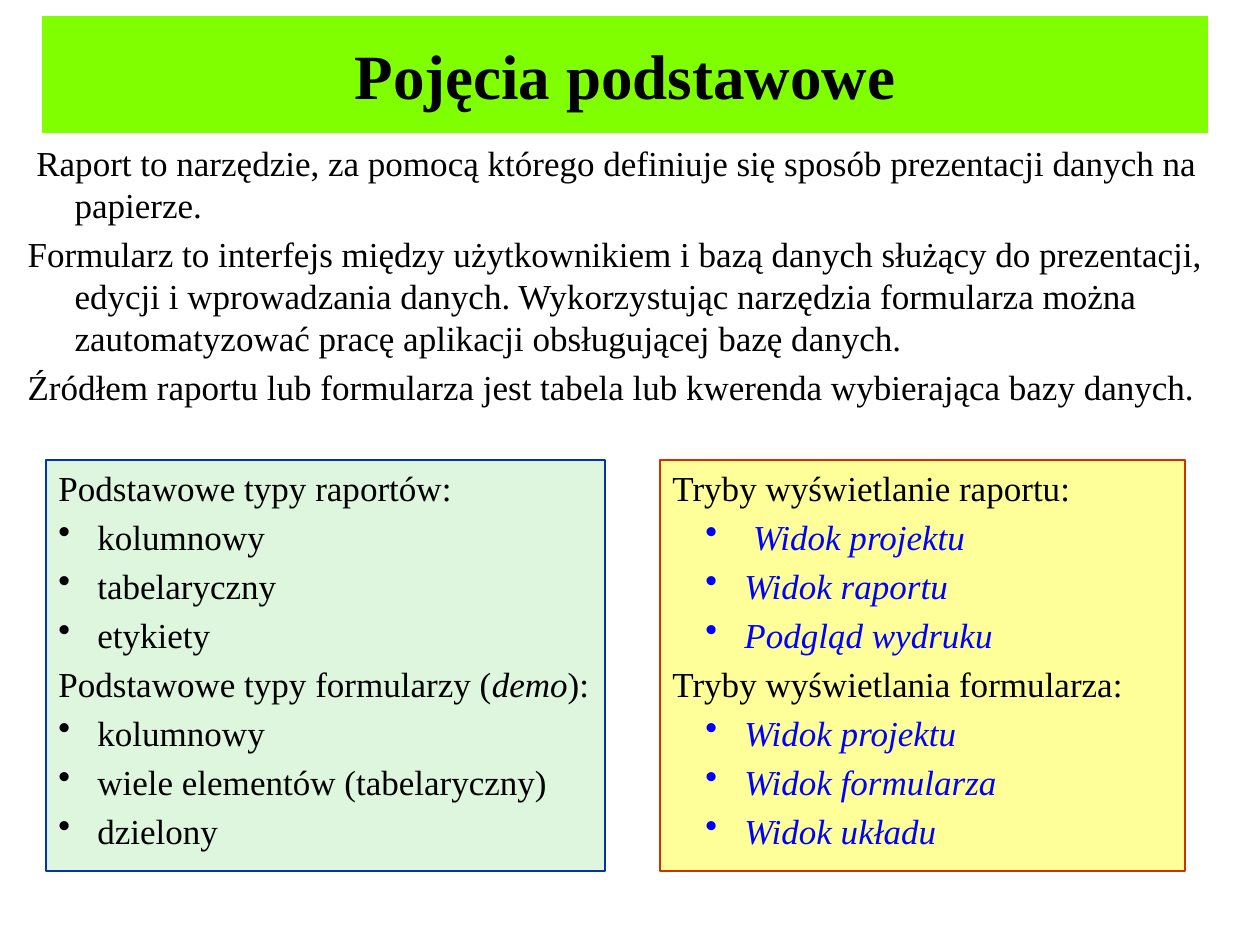
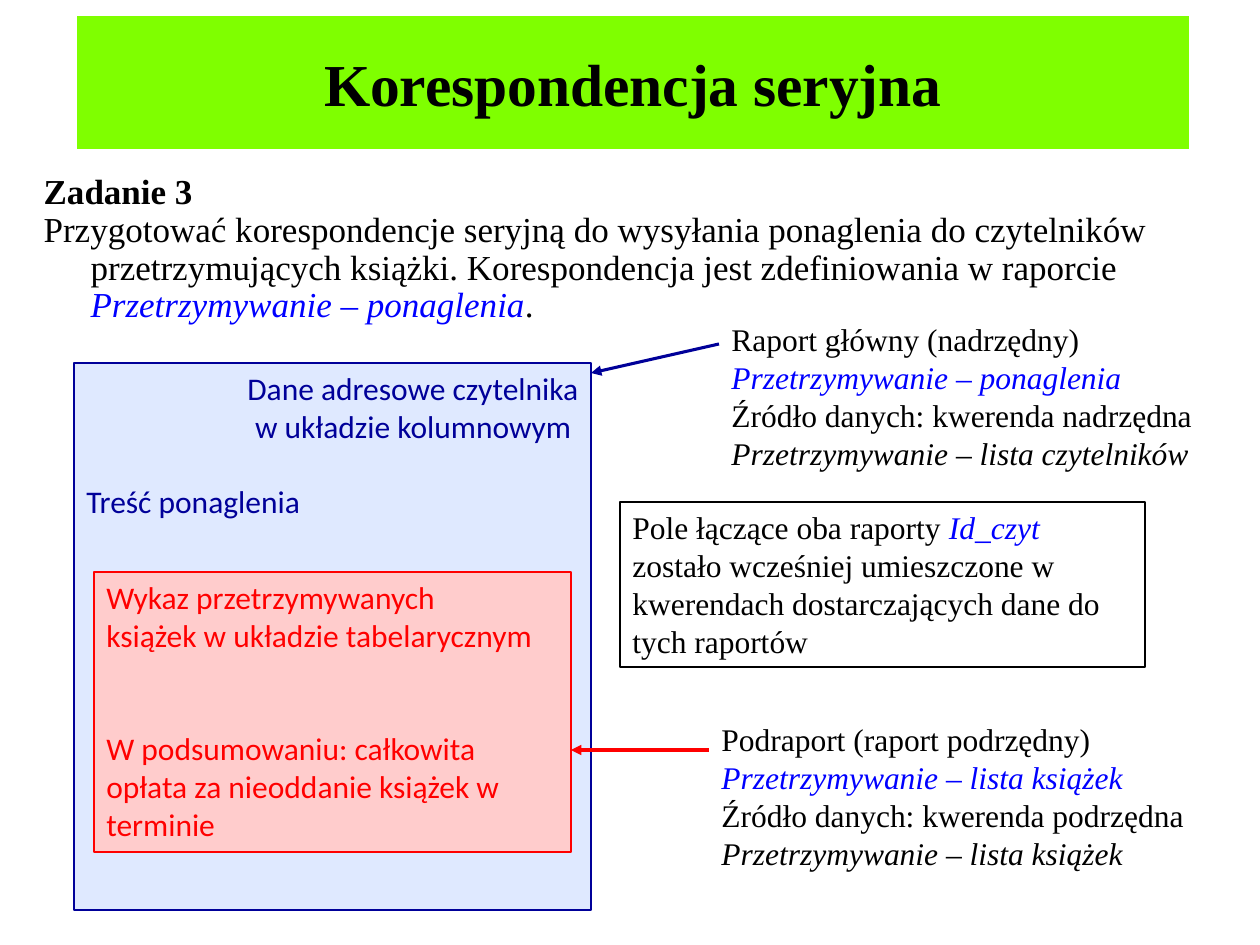
from dataclasses import dataclass

from lxml.etree import SubElement
from pptx import Presentation
from pptx.dml.color import RGBColor
from pptx.enum.shapes import MSO_CONNECTOR, MSO_SHAPE
from pptx.enum.text import MSO_ANCHOR, MSO_AUTO_SIZE, PP_ALIGN
from pptx.oxml.ns import qn
from pptx.util import Emu, Pt

PX_PER_INCH = 126
PAGE_WIDTH, PAGE_HEIGHT = 1260, 945


@dataclass(frozen=True)
class Theme:
    serif: str = "Times New Roman"
    sans: str = "Calibri"
    black: str = "000000"
    white: str = "FFFFFF"
    band: str = "7FFF00"
    accent: str = "0000FF"
    navy: str = "000099"
    red: str = "FF0000"
    ice: str = "DFE9FF"
    pink: str = "FFCCCC"
    mint: str = "DEF5DE"
    mint_edge: str = "0234AD"
    yellow: str = "FFFF99"
    yellow_edge: str = "CC3300"
    title_size: int = 36
    small_title_size: int = 34
    body_size: int = 20
    note_size: int = 18
    list_gap: int = 4
    sans_line: float = 21.5


THEME = Theme()
EMPHASIS = dict(italic=True)
OBJECT_NAME = dict(italic=True, color=THEME.accent)
HANGING = 47
BULLET_GAP = 39


def px(length):
    return Emu(round(length * 914400 / PX_PER_INCH))


def rgb(color):
    return RGBColor.from_string(color)


# Text

def add_span(para, text, size=THEME.body_size, font=THEME.serif,
             color=THEME.black, bold=False, italic=False):
    span = para.add_run()
    span.text = text
    span.font.size, span.font.name = Pt(size), font
    span.font.bold, span.font.italic = bold, italic
    span.font.color.rgb = rgb(color)


def set_indent(para, left=0, first=0, bullet=None):
    """Set the margins of a paragraph and its bullet with its colour."""
    props = para._p.get_or_add_pPr()
    props.set("marL", str(px(left)))
    props.set("indent", str(px(first)))
    if bullet:
        color = SubElement(props, qn("a:buClr"))
        SubElement(color, qn("a:srgbClr"), val=bullet)
        SubElement(props, qn("a:buChar"), char="•")
    else:
        SubElement(props, qn("a:buNone"))


def add_para(frame, spans, before=0, align=PP_ALIGN.LEFT, line_spacing=1.0,
             left=0, first=0, bullet=None, **style):
    """Add one paragraph; a span is a text or a (text, format) pair."""
    para = frame.paragraphs[0]
    if para.runs:
        para = frame.add_paragraph()
    para.alignment = align
    para.line_spacing = line_spacing
    para.space_before, para.space_after = Pt(before), Pt(0)
    set_indent(para, left, first, bullet)
    for span in [spans] if isinstance(spans, str) else spans:
        text, extra = (span, {}) if isinstance(span, str) else span
        add_span(para, text, **{**style, **extra})


def prepare_frame(shape, anchor=MSO_ANCHOR.TOP, wrap=True):
    frame = shape.text_frame
    frame.auto_size = MSO_AUTO_SIZE.NONE
    frame.word_wrap = wrap
    frame.vertical_anchor = anchor
    return frame


# Parts shared by the pages

def place(shape, box):
    shape.left, shape.top, shape.width, shape.height = map(px, box)


def add_title(page, box, text, size, edge=None):
    title = page.shapes.title
    place(title, box)
    title.fill.solid()
    title.fill.fore_color.rgb = rgb(THEME.band)
    if edge:
        title.line.color.rgb = rgb(edge)
        title.line.width = Pt(4)
    add_para(prepare_frame(title, MSO_ANCHOR.MIDDLE), text,
             align=PP_ALIGN.CENTER, size=size, bold=True)


def add_body(page, box, paras, **layout):
    body = page.placeholders[1]
    place(body, box)
    frame = prepare_frame(body)
    for spans in paras:
        add_para(frame, spans, left=HANGING, first=-HANGING, **layout)


def add_panel(page, box, edge, fill=None, weight=0.75, wrap=True):
    """Draw a bordered rectangle and return its text frame."""
    panel = page.shapes.add_shape(MSO_SHAPE.RECTANGLE, *map(px, box))
    panel.shadow.inherit = False
    if fill:
        panel.fill.solid()
        panel.fill.fore_color.rgb = rgb(fill)
    else:
        panel.fill.background()
    panel.line.color.rgb = rgb(edge)
    panel.line.width = Pt(weight)
    return prepare_frame(panel, wrap=wrap)


def add_type_list(page, box, groups, fill, edge, item_left=0,
                  wrap=True, **item_style):
    """Fill a panel with headings, each followed by its bulleted items."""
    frame = add_panel(page, box, edge, fill, weight=1, wrap=wrap)
    bullet = item_style.get("color", THEME.black)
    for heading, items in groups:
        add_para(frame, heading, before=THEME.list_gap)
        for item in items:
            add_para(frame, item, before=THEME.list_gap, bullet=bullet,
                     left=item_left + BULLET_GAP, first=-BULLET_GAP,
                     **item_style)


def add_source_note(page, box, role, report, query_kind, query):
    """Describe a report: its role and name, then its data source."""
    note = page.shapes.add_textbox(*map(px, box))
    frame = prepare_frame(note)
    for label, name, style in (
            (role, report, OBJECT_NAME),
            (f"Źródło danych: kwerenda {query_kind}", query, EMPHASIS)):
        add_para(frame, [label + " ", (name, style)], size=THEME.note_size)


def add_arrow(page, start, end, color):
    arrow = page.shapes.add_connector(MSO_CONNECTOR.STRAIGHT,
                                      *map(px, (*start, *end)))
    arrow.line.color.rgb = rgb(color)
    arrow.line.width = Pt(1.75)
    SubElement(arrow.line._get_or_add_ln(), qn("a:tailEnd"), type="triangle")
    SubElement(arrow._element.spPr, qn("a:effectLst"))


# Page 1: basic terms

def build_terms_page(page):
    add_title(page, (42, 16, 1166, 117), "Pojęcia podstawowe",
              THEME.title_size)
    add_body(page, (15, 135, 1206, 325), [
        " Raport to narzędzie, za pomocą którego definiuje się sposób "
        "prezentacji danych na papierze.",
        "Formularz to interfejs między użytkownikiem i bazą danych służący "
        "do prezentacji, edycji i wprowadzania danych. Wykorzystując "
        "narzędzia formularza można zautomatyzować pracę aplikacji "
        "obsługującej bazę danych.",
        "Źródłem raportu lub formularza jest tabela lub kwerenda "
        "wybierająca bazy danych.",
    ], before=THEME.list_gap)

    top, height = 460, 411
    add_type_list(page, (660, top, 525, height), [
        ("Tryby wyświetlanie raportu:",
         [" Widok projektu", "Widok raportu", "Podgląd wydruku"]),
        ("Tryby wyświetlania formularza:",
         ["Widok projektu", "Widok formularza", "Widok układu"]),
    ], THEME.yellow, THEME.yellow_edge, item_left=33, **OBJECT_NAME)
    add_type_list(page, (46, top, 559, height), [
        ("Podstawowe typy raportów:",
         ["kolumnowy", "tabelaryczny", "etykiety"]),
        (["Podstawowe typy formularzy (", ("demo", EMPHASIS), "):"],
         ["kolumnowy", "wiele elementów (tabelaryczny)", "dzielony"]),
    ], THEME.mint, THEME.mint_edge, wrap=False)


# Page 2: mail merge

def add_report_sketch(page, box):
    """Draw the main report with its nested subreport."""
    left, top, width, height = box
    main = dict(size=THEME.note_size, font=THEME.sans, color=THEME.navy)
    frame = add_panel(page, box, THEME.navy, THEME.ice)
    for line in ("Dane adresowe czytelnika", "w układzie kolumnowym "):
        add_para(frame, line, align=PP_ALIGN.RIGHT, **main)
    add_para(frame, "Treść ponaglenia", before=THEME.sans_line, **main)

    nested = {**main, "color": THEME.red}
    frame = add_panel(page, (left + 20, top + 209, width - 40, height - 267),
                      THEME.red, THEME.pink)
    add_para(frame, "Wykaz przetrzymywanych", **nested)
    add_para(frame, "książek w układzie tabelarycznym", **nested)
    add_para(frame, "W podsumowaniu: całkowita opłata za nieoddanie "
             "książek w terminie", before=2 * THEME.sans_line, **nested)


def build_merge_page(page):
    add_title(page, (73, 13, 1120, 140), "Korespondencja seryjna",
              THEME.small_title_size, edge=THEME.white)
    add_body(page, (31, 168, 1187, 166), [
        [("Zadanie 3", dict(bold=True))],
        ["Przygotować korespondencje seryjną do wysyłania ponaglenia do "
         "czytelników przetrzymujących książki. Korespondencja jest "
         "zdefiniowania w raporcie ",
         ("Przetrzymywanie – ponaglenia", OBJECT_NAME), "."],
    ], line_spacing=0.9)

    add_report_sketch(page, (74, 363, 517, 547))

    note_width, note_height = 525, 165
    add_source_note(page, (719, 314, note_width, note_height),
                    "Raport główny (nadrzędny)",
                    "Przetrzymywanie – ponaglenia",
                    "nadrzędna", "Przetrzymywanie – lista czytelników")
    add_source_note(page, (709, 714, note_width, note_height),
                    "Podraport (raport podrzędny)",
                    "Przetrzymywanie – lista książek",
                    "podrzędna", "Przetrzymywanie – lista książek")

    # Field that links both reports
    frame = add_panel(page, (620, 502, note_width, note_height), THEME.black)
    add_para(frame, ["Pole łączące oba raporty ", ("Id_czyt", OBJECT_NAME),
                     " zostało wcześniej umieszczone w kwerendach "
                     "dostarczających dane do tych raportów"],
             size=THEME.note_size)

    add_arrow(page, (719, 344), (591, 373), THEME.navy)
    add_arrow(page, (709, 750), (571, 750), THEME.red)


def main():
    deck = Presentation()
    deck.slide_width, deck.slide_height = px(PAGE_WIDTH), px(PAGE_HEIGHT)
    title_and_body = deck.slide_layouts[1]
    for build in (build_terms_page, build_merge_page):
        build(deck.slides.add_slide(title_and_body))
    deck.save("out.pptx")


if __name__ == "__main__":
    main()
